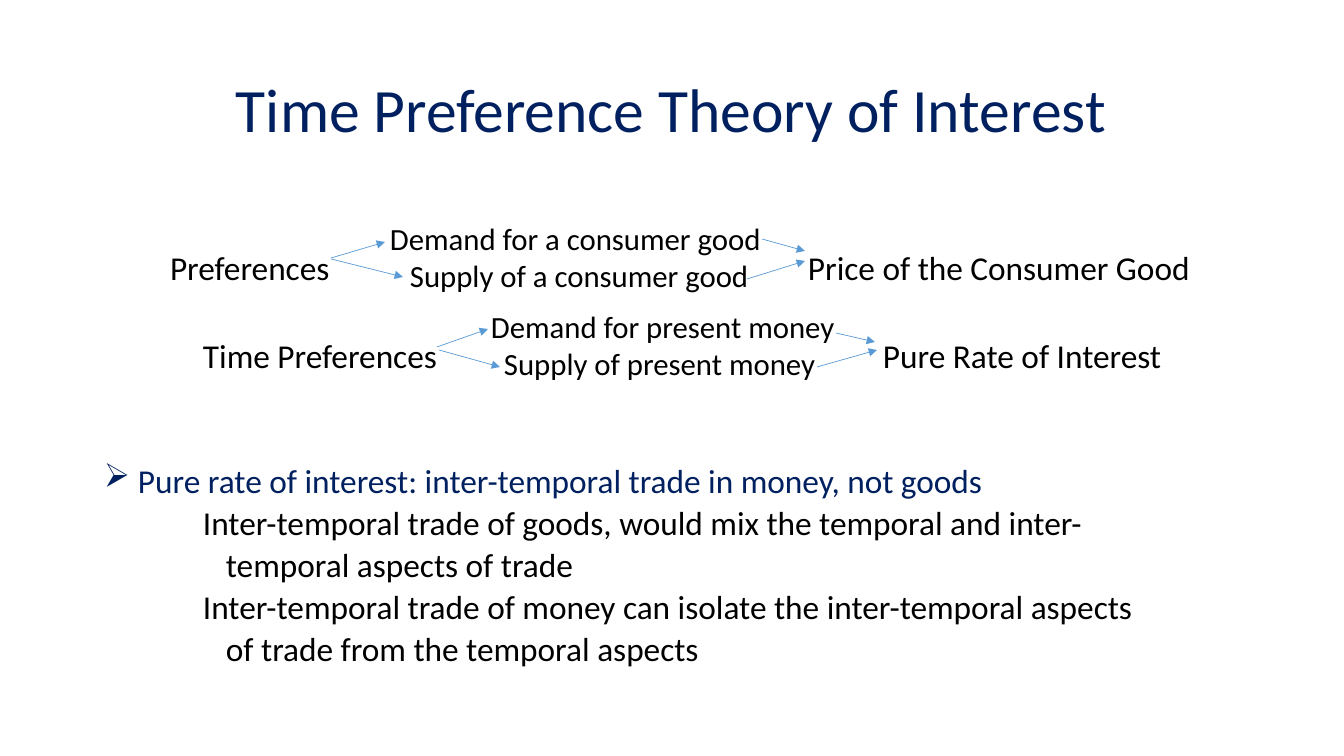
from lxml import etree
from pptx import Presentation
from pptx import util as u
from pptx.dml.color import RGBColor
from pptx.enum import shapes, text
from pptx.oxml.ns import qn

# Content; lengths in px, font sizes in points
SCALE = 914400 / 100.8
NAVY, BLACK, BLUE = "002060", "000000", "5B9BD5"
FONT = "Calibri"

TITLE = "Time Preference Theory of Interest"
# Each chain: (cause, x), (demand, x), (supply, x), (result, x), top of the pair
CHAINS = [
    (("Preferences", 170), ("Demand for a consumer good", 390),
     ("Supply of a consumer good", 410), ("Price of the Consumer Good", 808), 220),
    (("Time Preferences", 203), ("Demand for present money", 491),
     ("Supply of present money", 504), ("Pure Rate of Interest", 883), 308),
]
ARROWS = [
    (331, 258, 385, 242), (331, 259, 403, 277),
    (762, 239, 805, 251), (747, 279, 805, 261),
    (437, 347, 488, 329), (439, 350, 500, 367),
    (836, 333, 875, 342), (817, 367, 877, 350),
]
# Text, colour, left margin, first-line indent, bullet
POINTS = [
    ("Pure rate of interest: inter-temporal trade in money, not goods", NAVY, 34, -34, "➢"),
    ("Inter-temporal trade of goods, would mix the temporal and inter-temporal "
     "aspects of trade", BLACK, 122, -23, None),
    ("Inter-temporal trade of money can isolate the inter-temporal aspects of "
     "trade from the temporal aspects", BLACK, 122, -23, None),
]
LABEL_SIZE, PAIR_SIZE, TITLE_SIZE = 23.8, 22, 44


def px(length):
    return round(length * SCALE)


def rgb(value):
    return RGBColor.from_string(value)


def add_frame(left, top, width, height, **options):
    frame = slide.shapes.add_textbox(*map(px, (left, top, width, height))).text_frame
    settings = dict(margin_left=0, margin_right=0, margin_top=0, margin_bottom=0,
                    word_wrap=True, vertical_anchor=text.MSO_ANCHOR.TOP)
    for name, value in (settings | options).items():
        setattr(frame, name, value)
    return frame


def write(paragraph, words, size, colour=BLACK, margin=0, indent=0, bullet=None):
    run = paragraph.add_run()
    run.text = words
    for name, value in dict(name=FONT, size=u.Pt(size)).items():
        setattr(run.font, name, value)
    run.font.color.rgb = rgb(colour)
    props = paragraph._p.get_or_add_pPr()
    props.set("marL", str(px(margin)))
    props.set("indent", str(px(indent)))
    if bullet:
        etree.SubElement(props, qn("a:buChar")).set("char", bullet)


def add_arrow(x1, y1, x2, y2):
    arrow = slide.shapes.add_connector(shapes.MSO_CONNECTOR.STRAIGHT,
                                       *map(px, (x1, y1, x2, y2)))
    arrow.line.color.rgb = rgb(BLUE)
    arrow.line.width = u.Pt(0.5)
    etree.SubElement(arrow.line._get_or_add_ln(), qn("a:tailEnd")).set("type", "triangle")
    etree.SubElement(arrow._element.spPr, qn("a:effectLst"))


deck = Presentation()
deck.slide_width, deck.slide_height = px(1344), px(756)
slide = deck.slides.add_slide(deck.slide_layouts[6])

# Title
heading = add_frame(92, 40, 1159, 146, vertical_anchor=text.MSO_ANCHOR.MIDDLE).paragraphs[0]
heading.alignment = text.PP_ALIGN.CENTER
heading.line_spacing = 0.9
write(heading, TITLE, TITLE_SIZE, NAVY)

# Cause, demand and supply, result
for cause, demand, supply, result, top in CHAINS:
    for words, left in (cause, result):
        label = add_frame(left, top + 27, 400, 41, word_wrap=False)
        write(label.paragraphs[0], words, LABEL_SIZE)
    pair = add_frame(demand[1], top, 380, 75, word_wrap=False)
    write(pair.paragraphs[0], demand[0], PAIR_SIZE)
    write(pair.add_paragraph(), supply[0], PAIR_SIZE, margin=supply[1] - demand[1])

# Arrows
for ends in ARROWS:
    add_arrow(*ends)

# Explanation
explanation = add_frame(104, 458, 1043, 212)
for number, (words, *look) in enumerate(POINTS):
    point = explanation.add_paragraph() if number else explanation.paragraphs[0]
    point.line_spacing = u.Pt(30)
    write(point, words, LABEL_SIZE, *look)

deck.save("out.pptx")
